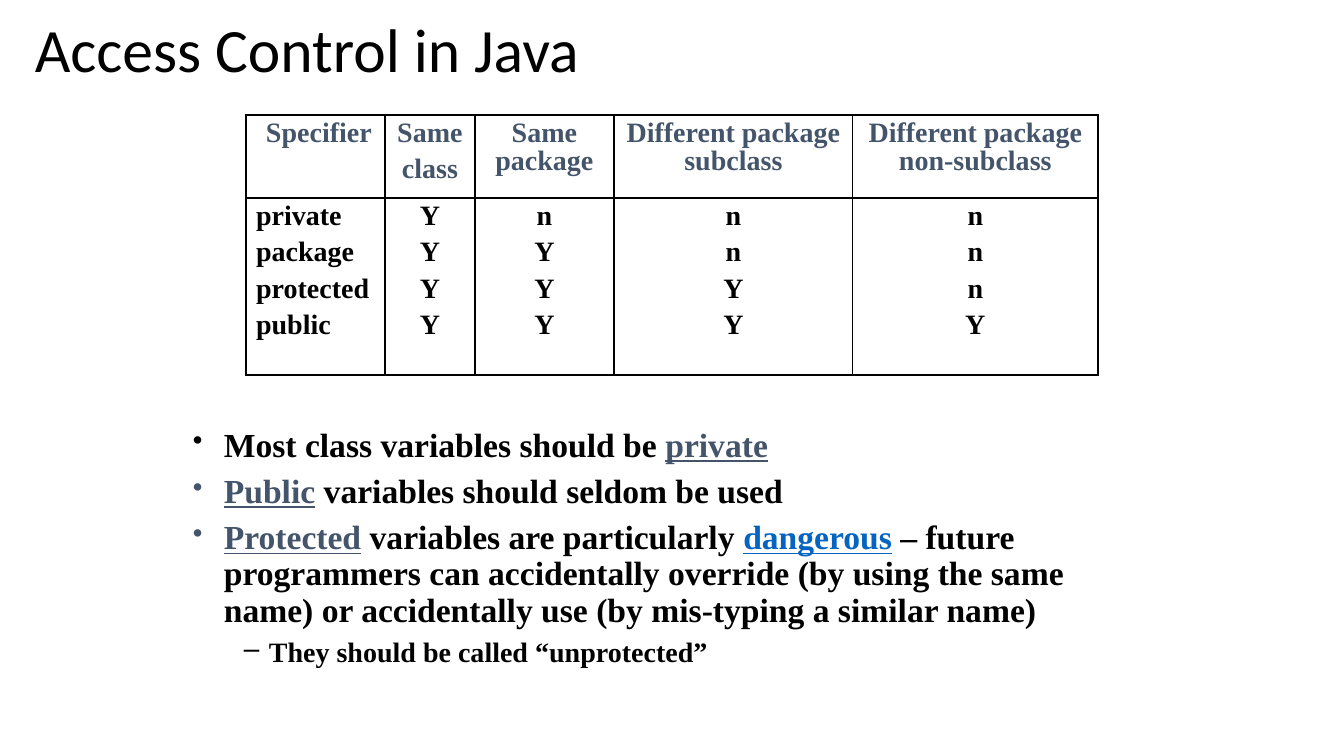
"""Build a slide on access control in Java: a specifier table and advice bullets."""
from dataclasses import dataclass

from lxml import etree
from pptx import Presentation, util as u
from pptx.dml.color import RGBColor
from pptx.enum import text
from pptx.oxml.ns import qn

TITLE = "Access Control in Java"
HEADERS = [[" Specifier"], ["Same", "class"], ["Same package"],
           ["Different package subclass"], ["Different package non-subclass"]]
ACCESS = [
    ("private", "Y", "n", "n", "n"),
    ("package", "Y", "Y", "n", "n"),
    ("protected", "Y", "Y", "Y", "n"),
    ("public", "Y", "Y", "Y", "Y"),
]
ADVICE = [
    (0, [("Most class variables should be ", "ink"), ("private", "accent")]),
    (0, [("Public", "accent"), (" variables should seldom be used", "ink")]),
    (0, [("Protected", "accent"), (" variables are particularly ", "ink"),
         ("dangerous", "link"),
         (" – future programmers can accidentally override (by using the same "
          "name) or accidentally use (by mis-typing a similar name)", "ink")]),
    (1, [("They should be called “unprotected”", "ink")]),
]

SLIDE = (1344, 756)
TITLE_BOX = (25, 11, 1295, 84)
ADVICE_BOX = (183, 423, 978, 268)
TABLE_AT = (246, 115)
COLUMNS = (139, 90, 139, 239, 245)
ROWS = (83, 177)


@dataclass(frozen=True)
class Theme:
    """Colours, fonts and type sizes."""
    ink: str = "000000"
    accent: str = "44546A"
    link: str = "0563C1"
    title_font: str = "Calibri"
    body_font: str = "Times New Roman"
    title_size: int = 44
    body_size: int = 24
    small_size: int = 20
    thin: float = 1
    thick: float = 2.25


THEME = Theme()
BULLETS = [("•", 85, 31, -31, THEME.body_size), ("–", 100, 76, -25, THEME.small_size)]


def px(length):
    """Turn px into EMU."""
    return u.Emu(round(length * 914400 / 100.8))


def add_node(parent, tag, **attributes):
    """Append one drawing element."""
    return etree.SubElement(parent, qn(tag), attributes)


def style_font(para, name, size, bold):
    """Set the font shared by a paragraph's runs."""
    para.font.name, para.font.size, para.font.bold = name, u.Pt(size), bold


def space_lines(para):
    """Tighten the lines and put a proportional gap above."""
    para.line_spacing = 0.9
    props = para._p.get_or_add_pPr()
    add_node(add_node(props, "a:spcBef"), "a:spcPct", val="30000")
    return props


def paragraphs(frame, count):
    """Yield the first paragraph, then new ones."""
    for index in range(count):
        yield frame.add_paragraph() if index else frame.paragraphs[0]


def add_box(page, bounds):
    """Add a wrapping text box and return its frame."""
    frame = page.shapes.add_textbox(*map(px, bounds)).text_frame
    frame.word_wrap = True
    return frame


def add_title(page):
    """Add the heading."""
    frame = add_box(page, TITLE_BOX)
    frame.vertical_anchor = text.MSO_ANCHOR.MIDDLE
    para = frame.paragraphs[0]
    para.text, para.line_spacing = TITLE, 0.9
    style_font(para, THEME.title_font, THEME.title_size, False)
    para.font.color.rgb = RGBColor.from_string(THEME.ink)


def draw_borders(cell, row, column):
    """Draw thick lines on the table's rim and thin ones inside."""
    rim = {"L": column == 0, "R": column == len(COLUMNS) - 1,
           "T": row == 0, "B": row == len(ROWS) - 1}
    props = cell._tc.get_or_add_tcPr()
    for side, outer in rim.items():
        width = u.Pt(THEME.thick if outer else THEME.thin)
        line = add_node(props, f"a:ln{side}", w=str(width))
        add_node(add_node(line, "a:solidFill"), "a:srgbClr", val=THEME.ink)


def fill_cell(cell, lines, color, align):
    """Write a cell's lines."""
    for para, line in zip(paragraphs(cell.text_frame, len(lines)), lines):
        para.text, para.alignment = line, align
        space_lines(para)
        style_font(para, THEME.body_font, THEME.small_size, True)
        para.font.color.rgb = RGBColor.from_string(color)


def add_access_table(page):
    """Add the table of specifiers."""
    table = page.shapes.add_table(len(ROWS), len(COLUMNS), *map(px, TABLE_AT),
                                  px(sum(COLUMNS)), px(sum(ROWS))).table
    table.first_row = table.horz_banding = False
    for row, height in enumerate(ROWS):
        table.rows[row].height = px(height)
    for column, width in enumerate(COLUMNS):
        table.columns[column].width = px(width)
        values = [record[column] for record in ACCESS]
        for row, (lines, color) in enumerate([(HEADERS[column], THEME.accent),
                                              (values, THEME.ink)]):
            cell = table.cell(row, column)
            left = row == 1 and column == 0
            align = text.PP_ALIGN.LEFT if left else text.PP_ALIGN.CENTER
            fill_cell(cell, lines, color, align)
            draw_borders(cell, row, column)
            cell.fill.background()


def add_advice(page):
    """Add the bulleted advice."""
    frame = add_box(page, ADVICE_BOX)
    for para, (level, spans) in zip(paragraphs(frame, len(ADVICE)), ADVICE):
        mark, percent, margin, indent, size = BULLETS[level]
        para.level = level
        props = space_lines(para)
        props.set("marL", str(px(margin)))
        props.set("indent", str(px(indent)))
        add_node(props, "a:buSzPct", val=str(percent * 1000))
        add_node(props, "a:buChar", char=mark)
        style_font(para, THEME.body_font, size, True)
        for words, role in spans:
            span = para.add_run()
            span.text = words
            span.font.color.rgb = RGBColor.from_string(getattr(THEME, role))
            span.font.underline = role != "ink"


def main():
    """Build and save the deck."""
    deck = Presentation()
    deck.slide_width, deck.slide_height = map(px, SLIDE)
    page = deck.slides.add_slide(deck.slide_layouts[6])
    add_title(page)
    add_access_table(page)
    add_advice(page)
    deck.save("out.pptx")


if __name__ == "__main__":
    main()
